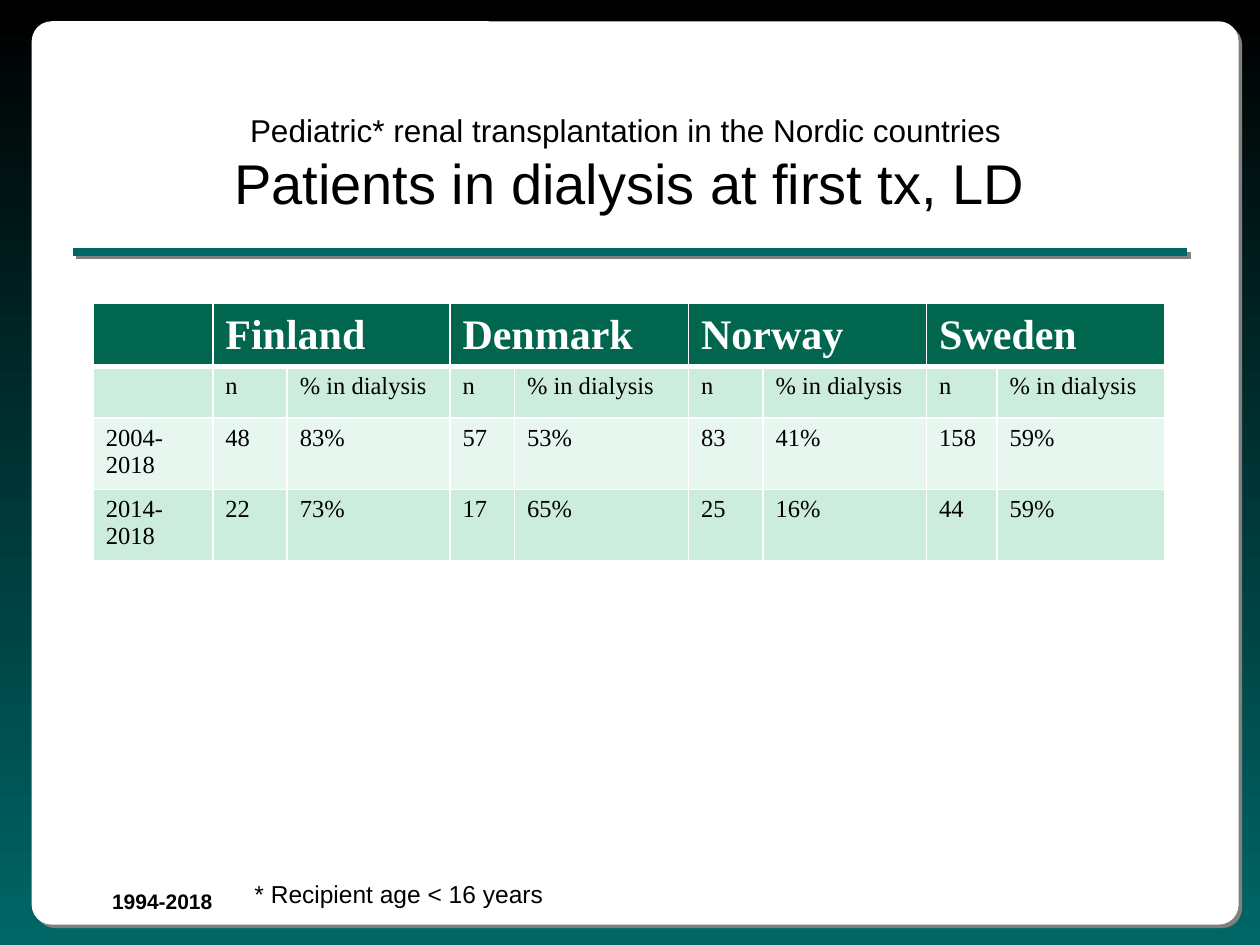
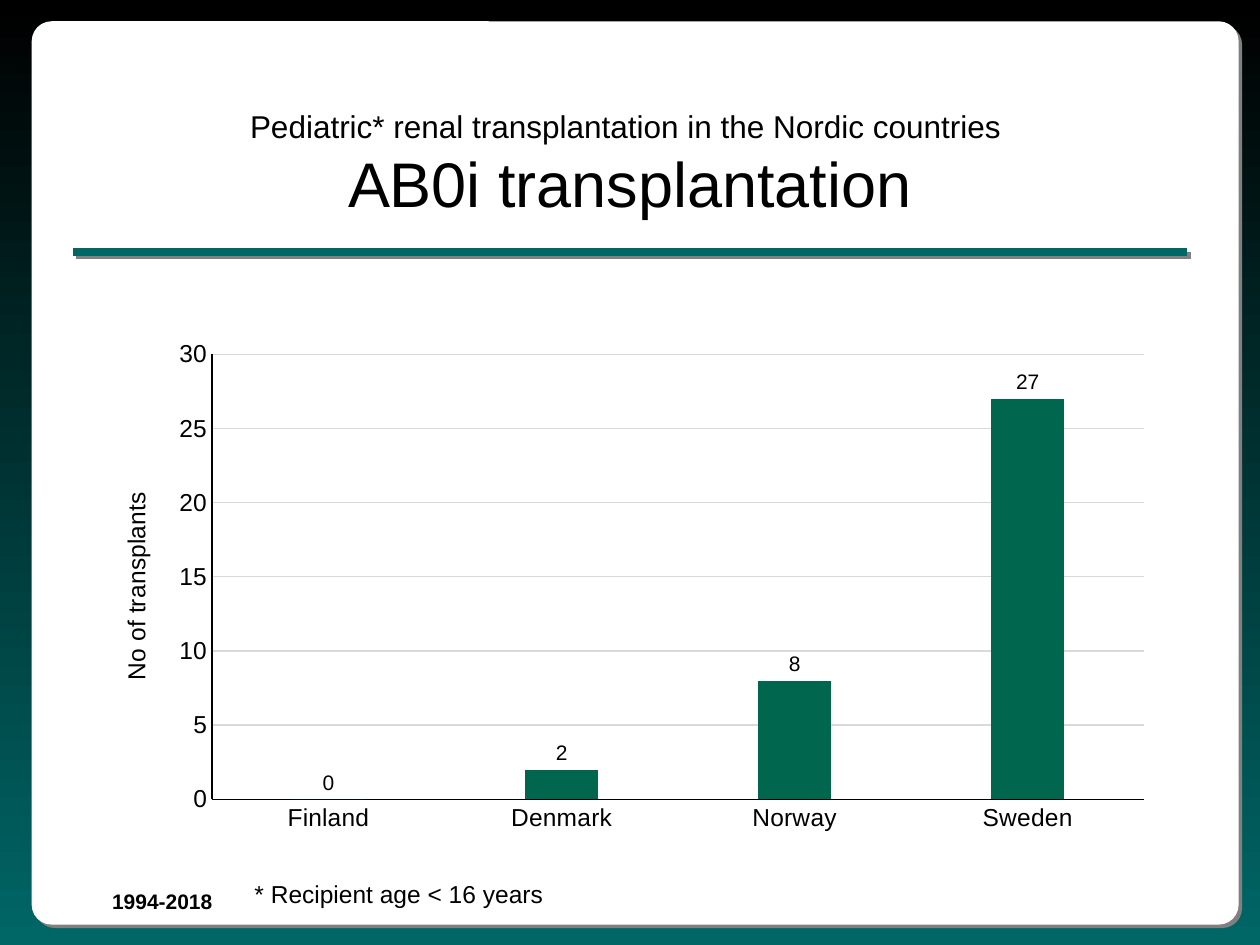
from dataclasses import dataclass
from typing import NamedTuple

from lxml import etree
from pptx import Presentation
from pptx import util as u
from pptx.chart.data import CategoryChartData
from pptx.dml.color import RGBColor
from pptx.enum import chart as ch, shapes as sh, text as tx
from pptx.oxml import ns


@dataclass(frozen=True)
class Theme:
    ink: str = "000000"
    paper: str = "FFFFFF"
    teal: str = "006666"
    green: str = "00664D"
    mint: str = "CCECDE"
    pale: str = "E7F6EF"
    grid: str = "D9D9D9"
    shade: str = "808080"
    sans: str = "Arial"
    serif: str = "Times New Roman"
    lead: int = 18
    head: int = 24
    body: int = 14
    small: int = 12


class Box(NamedTuple):
    """Left, top, width and height in centimetres."""
    left: float
    top: float
    width: float
    height: float

    def emu(self) -> list:
        return [u.Cm(side) for side in self]


class Label(NamedTuple):
    words: str
    box: Box
    size: int
    bold: bool
    wrap: bool


THEME = Theme()
FRAME = Box(0.64, 0.43, 24.33, 18.21)
TITLE = Box(1.9, 1.7, 21.6, 3.18)
CHART = Box(1.9, 6.63, 21.6, 10.31)
TABLE = Box(1.88, 6.12, 21.6, 4.16)
RULE_LEFT, RULE_RIGHT, RULE_TOP = 1.47, 23.93, 5.08
LEAD = "Pediatric* renal transplantation in the Nordic countries "
YEARS = Label("1994-2018", Box(2.01, 17.78, 3.73, 0.76), THEME.small, True, True)
NOTE = Label("* Recipient age < 16 years", Box(4.88, 17.6, 6.35, 0.86),
             THEME.body, False, False)

LANDS = ["Finland", "Denmark", "Norway", "Sweden"]
WIDTHS = [2.41, 1.5, 3.28, 1.3, 3.51, 1.5, 3.3, 1.42, 3.38]
ROWS = [
    [""] + ["n", "% in dialysis"] * len(LANDS),
    ["2004-2018", "48", "83%", "57", "53%", "83", "41%", "158", "59%"],
    ["2014-2018", "22", "73%", "17", "65%", "25", "16%", "44", "59%"],
]
COUNTS = [0, 2, 8, 27]


def style(font, size: int, face: str = THEME.sans, color: str = THEME.ink,
          bold: bool = False) -> None:
    font.size = u.Pt(size)
    font.name = face
    font.bold = bold
    font.color.rgb = RGBColor.from_string(color)


def paint(fill, color: str) -> None:
    fill.solid()
    fill.fore_color.rgb = RGBColor.from_string(color)


def node(parent, tag: str, **attrs):
    return etree.SubElement(parent, ns.qn(tag), attrs)


def shade(shape) -> None:
    """Give the shape a hard shadow to the lower right."""
    effect = node(shape._element.spPr, "a:effectLst")
    cast = node(effect, "a:outerShdw", dist=str(u.Pt(2.8)), dir="2700000",
                algn="ctr", rotWithShape="0")
    node(cast, "a:srgbClr", val=THEME.shade)


def add_label(slide, label: Label) -> None:
    box = slide.shapes.add_textbox(*label.box.emu())
    frame = box.text_frame
    frame.text = label.words
    frame.word_wrap = label.wrap
    frame.auto_size = tx.MSO_AUTO_SIZE.SHAPE_TO_FIT_TEXT
    style(frame.paragraphs[0].runs[0].font, label.size, bold=label.bold)


def add_title(slide, words: str, size: int) -> None:
    title = slide.shapes.title
    title.left, title.top, title.width, title.height = TITLE.emu()
    frame = title.text_frame
    frame.auto_size = tx.MSO_AUTO_SIZE.NONE
    frame.vertical_anchor = tx.MSO_ANCHOR.MIDDLE
    para = frame.paragraphs[0]
    para.text = f"{LEAD}\v{words}"
    para.alignment = tx.PP_ALIGN.CENTER
    for run, points in zip(para.runs, (THEME.lead, size)):
        style(run.font, points)
    slide.shapes._spTree.append(title._element)


def add_slide(deck, words: str, size: int):
    """Add a slide with the frame, rule, title and footer all slides share."""
    slide = deck.slides.add_slide(deck.slide_layouts.get_by_name("Title Only"))
    frame = slide.shapes.add_shape(sh.MSO_SHAPE.ROUNDED_RECTANGLE, *FRAME.emu())
    frame.adjustments[0] = 0.022
    paint(frame.fill, THEME.paper)
    frame.line.fill.background()
    shade(frame)
    add_label(slide, YEARS)
    rule = slide.shapes.add_connector(
        sh.MSO_CONNECTOR.STRAIGHT, u.Cm(RULE_LEFT), u.Cm(RULE_TOP),
        u.Cm(RULE_RIGHT), u.Cm(RULE_TOP))
    rule.line.width = u.Pt(4.5)
    paint(rule.line.fill, THEME.teal)
    shade(rule)
    add_title(slide, words, size)
    add_label(slide, NOTE)
    return slide


def edge(cell, base: float) -> None:
    """Draw white cell borders, the bottom one with its own width."""
    props = cell._tc.get_or_add_tcPr()
    for side, points in zip("LRTB", (1, 1, 1, base)):
        line = node(props, f"a:ln{side}", w=str(u.Pt(points)))
        node(node(line, "a:solidFill"), "a:srgbClr", val=THEME.paper)


def add_table(slide) -> None:
    grid = slide.shapes.add_table(len(ROWS) + 1, len(WIDTHS), *TABLE.emu()).table
    for col, width in zip(grid.columns, WIDTHS):
        col.width = u.Cm(width)
    for row in grid.rows:
        row.height = u.Cm(TABLE.height / len(grid.rows))
    header = [""] + [part for land in LANDS for part in (land, "")]
    for r, row in enumerate([header] + ROWS):
        for c, words in enumerate(row):
            cell = grid.cell(r, c)
            edge(cell, 1 if r else 3)
            paint(cell.fill, (THEME.mint if r % 2 else THEME.pale)
                  if r else THEME.green)
            if not words:
                continue
            cell.text = words
            font = cell.text_frame.paragraphs[0].runs[0].font
            if r:
                style(font, THEME.body, THEME.serif)
            else:
                style(font, THEME.head, THEME.serif, THEME.paper, True)
                cell.vertical_anchor = tx.MSO_ANCHOR.MIDDLE
    for c in range(1, len(WIDTHS), 2):
        grid.cell(0, c).merge(grid.cell(0, c + 1))
    # Row bands alternate from the second row down
    for c in range(len(WIDTHS)):
        paint(grid.cell(3, c).fill, THEME.mint)


def place_plot(chart, **share: float) -> None:
    """Fix the inner plot area as shares of the chart."""
    area = chart._chartSpace.chart.plotArea
    for old in area.findall(ns.qn("c:layout")):
        area.remove(old)
    layout = node(area, "c:layout")
    area.insert(0, layout)
    manual = node(layout, "c:manualLayout")
    node(manual, "c:layoutTarget", val="inner")
    for side in "xy":
        node(manual, f"c:{side}Mode", val="edge")
    for side, value in share.items():
        node(manual, f"c:{side}", val=str(value))


def add_chart(slide) -> None:
    data = CategoryChartData()
    data.categories = LANDS
    data.add_series("Series 1", COUNTS)
    chart = slide.shapes.add_chart(
        ch.XL_CHART_TYPE.COLUMN_CLUSTERED, *CHART.emu(), data).chart
    chart.has_legend = chart.has_title = False
    style(chart.font, THEME.small)
    place_plot(chart, x=0.11, y=0.05, w=0.87, h=0.87)

    for axis in (chart.category_axis, chart.value_axis):
        axis.major_tick_mark = axis.minor_tick_mark = ch.XL_TICK_MARK.NONE
        style(axis.tick_labels.font, THEME.body)
        axis.format.line.width = u.Pt(0.75)
        paint(axis.format.line.fill, THEME.ink)
    scale = chart.value_axis
    scale.minimum_scale, scale.maximum_scale, scale.major_unit = 0, 30, 5
    scale.major_gridlines.format.line.width = u.Pt(0.75)
    paint(scale.major_gridlines.format.line.fill, THEME.grid)
    frame = scale.axis_title.text_frame
    frame.text = "No of transplants"
    style(frame.paragraphs[0].runs[0].font, THEME.body)

    plot = chart.plots[0]
    plot.gap_width, plot.overlap = 219, -27
    plot.vary_by_categories = False
    paint(plot.series[0].format.fill, THEME.green)
    plot.has_data_labels = True
    labels = plot.data_labels
    labels.show_value = True
    labels.position = ch.XL_LABEL_POSITION.OUTSIDE_END
    style(labels.font, THEME.small)


def main() -> None:
    deck = Presentation()
    deck.slide_width, deck.slide_height = u.Cm(25.4), u.Cm(19.05)
    back = deck.slide_master.background.fill
    back.gradient()
    back.gradient_angle = 270
    for stop, color in zip(back.gradient_stops, (THEME.ink, THEME.teal)):
        stop.color.rgb = RGBColor.from_string(color)
    add_table(add_slide(deck, "Patients in dialysis at first tx, LD", 32))
    add_chart(add_slide(deck, "AB0i transplantation", 36))
    deck.save("out.pptx")


if __name__ == "__main__":
    main()
